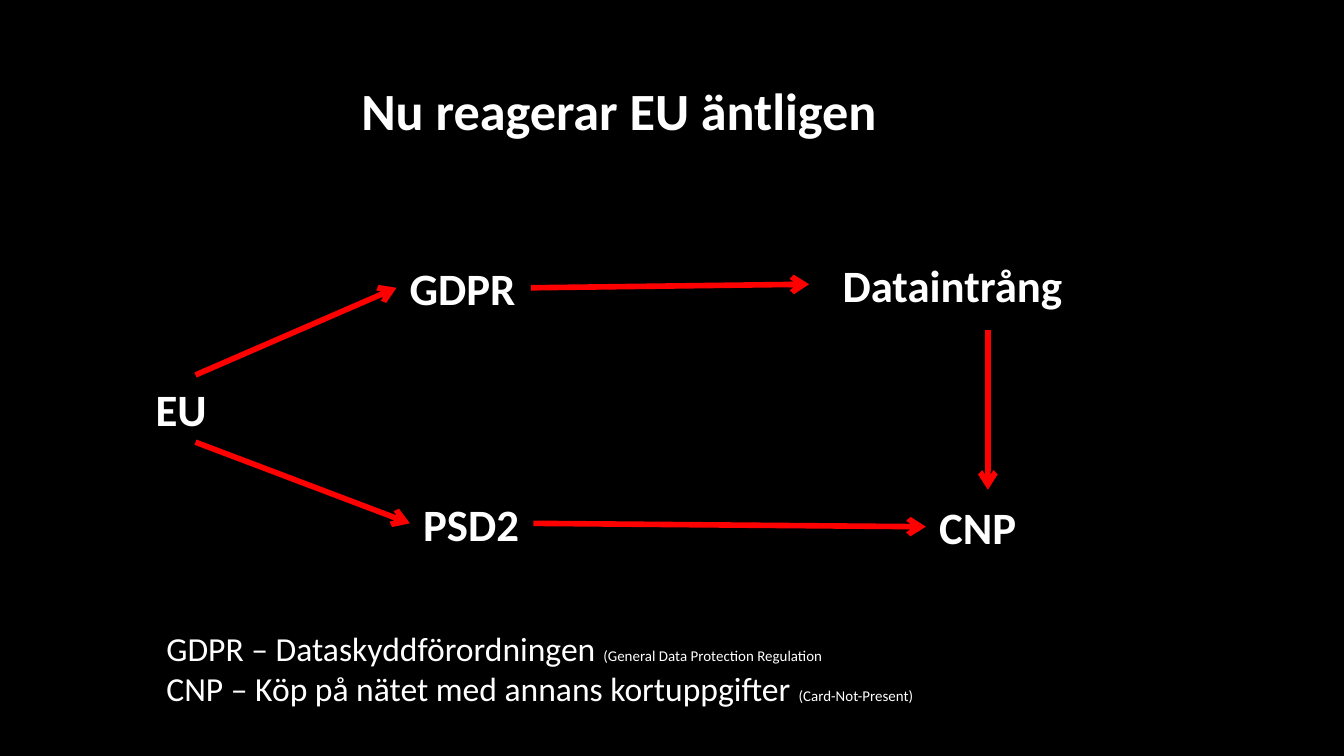
import pptx
import pptx.dml.color
import pptx.enum.shapes
import pptx.enum.text
import pptx.oxml
import pptx.oxml.ns
import pptx.util

Pt = pptx.util.Pt
Align = pptx.enum.text.PP_ALIGN
Anchor = pptx.enum.text.MSO_ANCHOR
Fit = pptx.enum.text.MSO_AUTO_SIZE

BLACK = pptx.dml.color.RGBColor(0, 0, 0)
WHITE = pptx.dml.color.RGBColor(255, 255, 255)
RED = pptx.dml.color.RGBColor(255, 0, 0)
TOP, LEFT, BOTTOM, RIGHT = range(4)


def write(frame, *lines, size=24, bold=True, align=Align.LEFT,
          anchor=Anchor.TOP, wrap=True, fit=Fit.SHAPE_TO_FIT_TEXT):
    """Fill a frame; each line is a string or a list of (text, size) runs."""
    frame.word_wrap = wrap
    frame.auto_size = fit
    frame.vertical_anchor = anchor
    for i, line in enumerate(lines):
        para = frame.add_paragraph() if i else frame.paragraphs[0]
        para.alignment = align
        for text, pts in [(line, size)] if isinstance(line, str) else line:
            run = para.add_run()
            run.text = text
            font = run.font
            font.name, font.size, font.bold = "Calibri", Pt(pts), bold
            font.color.rgb = WHITE


class Deck:
    """Holds the style and the current slide."""

    edge = 0.75
    stroke = 3

    def __init__(self, wide, high):
        self.prs = pptx.Presentation()
        self.prs.slide_width, self.prs.slide_height = Pt(wide), Pt(high)
        self.slide = self.prs.slides.add_slide(self.prs.slide_layouts[5])
        back = self.slide.background.fill
        back.solid()
        back.fore_color.rgb = BLACK

    def frame(self, shape):
        shape.line.color.rgb = BLACK
        shape.line.width = Pt(self.edge)

    def title(self, text, x, y, w, h):
        head = self.slide.shapes.title
        head.left, head.top, head.width, head.height = map(Pt, (x, y, w, h))
        self.frame(head)
        write(head.text_frame, text, size=28, align=Align.CENTER)

    def node(self, text, x, y, w, h=36, **style):
        box = self.slide.shapes.add_shape(
            pptx.enum.shapes.MSO_SHAPE.RECTANGLE, *map(Pt, (x, y, w, h)))
        box.shadow.inherit = False
        box.fill.background()
        self.frame(box)
        write(box.text_frame, text, **style)
        return box

    def note(self, *lines, x, y, w, h):
        box = self.slide.shapes.add_textbox(*map(Pt, (x, y, w, h)))
        write(box.text_frame, *lines, bold=False)

    def arrow(self, x1=0, y1=0, x2=0, y2=0):
        link = self.slide.shapes.add_connector(
            pptx.enum.shapes.MSO_CONNECTOR.STRAIGHT,
            *map(Pt, (x1, y1, x2, y2)))
        link.line.color.rgb = RED
        link.line.width = Pt(self.stroke)
        tail = pptx.oxml.parse_xml(
            f'<a:tailEnd {pptx.oxml.ns.nsdecls("a")} type="arrow"/>')
        link.line._get_or_add_ln().append(tail)
        link._element.spPr.append(pptx.oxml.parse_xml(
            f'<a:effectLst {pptx.oxml.ns.nsdecls("a")}/>'))
        return link

    def join(self, start, out, end, into):
        link = self.arrow()
        link.begin_connect(start, out)
        link.end_connect(end, into)


def main():
    deck = Deck(720, 405)
    deck.title("Nu reagerar EU äntligen", 76.3, 38.2, 510.5, 41)

    breach = deck.node("Dataintrång", 433.5, 129.6, 153.4, 45.4,
                       align=Align.CENTER, anchor=Anchor.MIDDLE, fit=Fit.NONE)
    gdpr = deck.node("GDPR", 212.4, 136.2, 72, wrap=False)
    cnp = deck.node("CNP", 496, 264.2, 56.2, wrap=False)
    psd = deck.node("PSD2", 219.6, 262.4, 66.2, wrap=False)
    union = deck.node("EU", 76.3, 200.9, 56.9)

    deck.join(gdpr, RIGHT, breach, LEFT)
    deck.join(psd, RIGHT, cnp, LEFT)
    deck.join(union, TOP, gdpr, LEFT)
    deck.join(union, BOTTOM, psd, LEFT)
    deck.arrow(529.2, 177, 529.2, 262.4)

    deck.note(
        [("GDPR – Dataskyddförordningen ", 18),
         ("(General Data Protection Regulation", 8)],
        [("CNP – Köp på nätet med annans kortuppgifter ", 18),
         ("(Card-Not-Present)", 8)],
        x=82.1, y=332.6, w=470.9, h=51)
    deck.prs.save("out.pptx")


if __name__ == "__main__":
    main()
